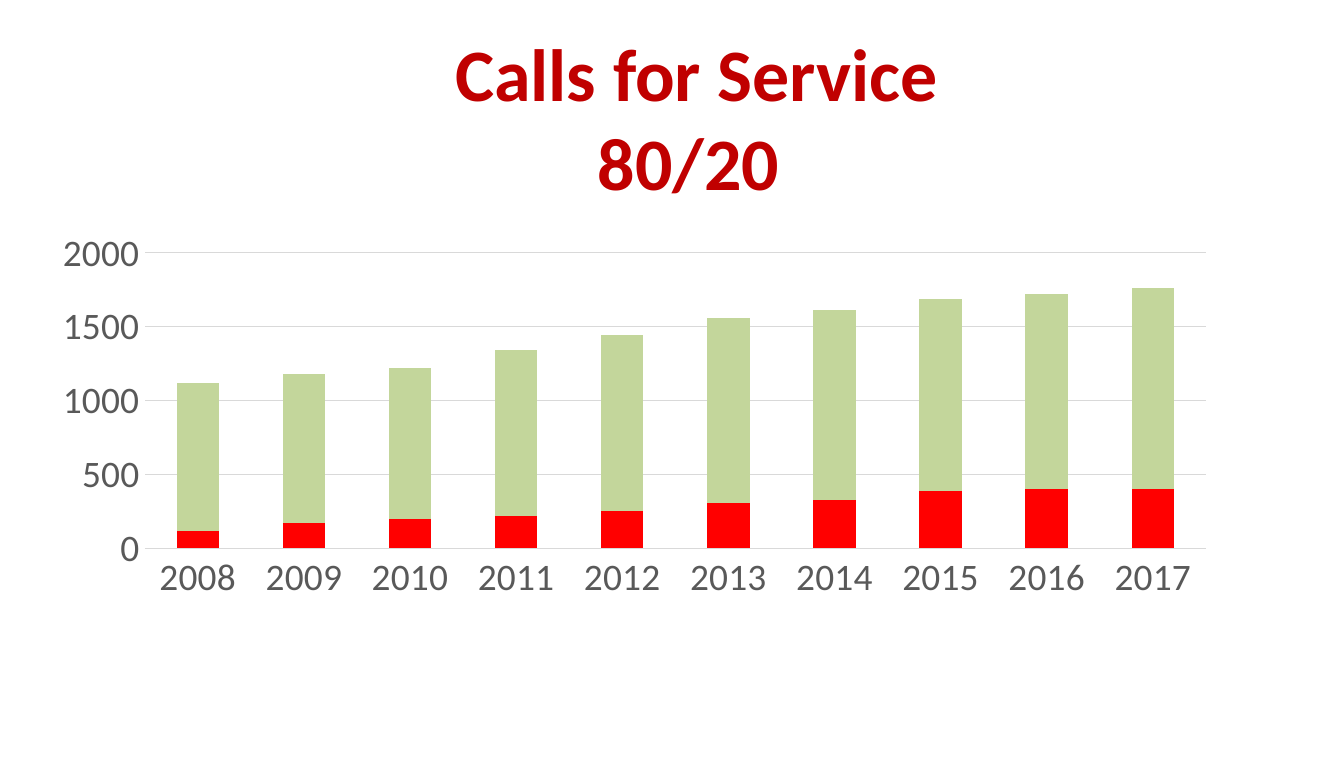
from pptx import Presentation
from pptx.chart.data import CategoryChartData
from pptx.dml.color import RGBColor
from pptx.enum.chart import XL_CHART_TYPE, XL_TICK_MARK
from pptx.enum.text import MSO_ANCHOR, PP_ALIGN
from pptx.util import Inches, Pt

STACKED = XL_CHART_TYPE.COLUMN_STACKED
NO_TICK = XL_TICK_MARK.NONE
CENTER = PP_ALIGN.CENTER
MIDDLE = MSO_ANCHOR.MIDDLE

# Content
TITLE = "Calls for Service 80/20 "
YEARS = [str(year) for year in range(2008, 2018)]
SERIES = [
    ("Series 1", "red", [120, 170, 200, 220, 250, 310, 330, 390, 400, 400]),
    ("Series 2", "green", [1000, 1010, 1020, 1120, 1190, 1250, 1280, 1300, 1320, 1360]),
]

# Format
COLORS = {"title": "C00000", "label": "595959", "grid": "D9D9D9",
          "red": "FF0000", "green": "C3D69B"}
TITLE_FONT = {"name": "Calibri", "size": Pt(39.6), "bold": True}
LABEL_FONT = {"name": "Calibri", "size": Pt(20), "bold": False}
TITLE_AREA = [Inches(n) for n in (2.83, 0.32, 4.71, 1.09)]
CHART_AREA = [Inches(n) for n in (0.29, 1.65, 8.86, 2.87)]


def color(name):
    return RGBColor.from_string(COLORS[name])


def set_font(font, values, color_name):
    for key, value in values.items():
        setattr(font, key, value)
    font.color.rgb = color(color_name)


def set_line(line):
    line.width = Pt(0.75)
    line.color.rgb = color("grid")


deck = Presentation()
deck.slide_width, deck.slide_height = Inches(10), Inches(5.63)
page = deck.slides.add_slide(deck.slide_layouts[6])

# Title
box = page.shapes.add_textbox(*TITLE_AREA)
frame = box.text_frame
frame.word_wrap = True
frame.vertical_anchor = MIDDLE
para = frame.paragraphs[0]
para.alignment = CENTER
span = para.add_run()
span.text = TITLE
set_font(span.font, TITLE_FONT, "title")

# Stacked columns
data = CategoryChartData()
data.categories = YEARS
for name, _, values in SERIES:
    data.add_series(name, values)
chart = page.shapes.add_chart(STACKED, *CHART_AREA, data).chart
chart.has_legend = False
chart.has_title = False
set_font(chart.font, LABEL_FONT, "label")

plot = chart.plots[0]
plot.gap_width = 150
plot.overlap = 100
plot.vary_by_categories = False
for series, (_, fill_color, _) in zip(plot.series, SERIES):
    series.format.fill.solid()
    series.format.fill.fore_color.rgb = color(fill_color)

# Axes
for axis in (chart.category_axis, chart.value_axis):
    axis.major_tick_mark = axis.minor_tick_mark = NO_TICK
    set_font(axis.tick_labels.font, LABEL_FONT, "label")
set_line(chart.category_axis.format.line)
chart.value_axis.format.line.fill.background()
chart.value_axis.has_major_gridlines = True
set_line(chart.value_axis.major_gridlines.format.line)

deck.save("out.pptx")
